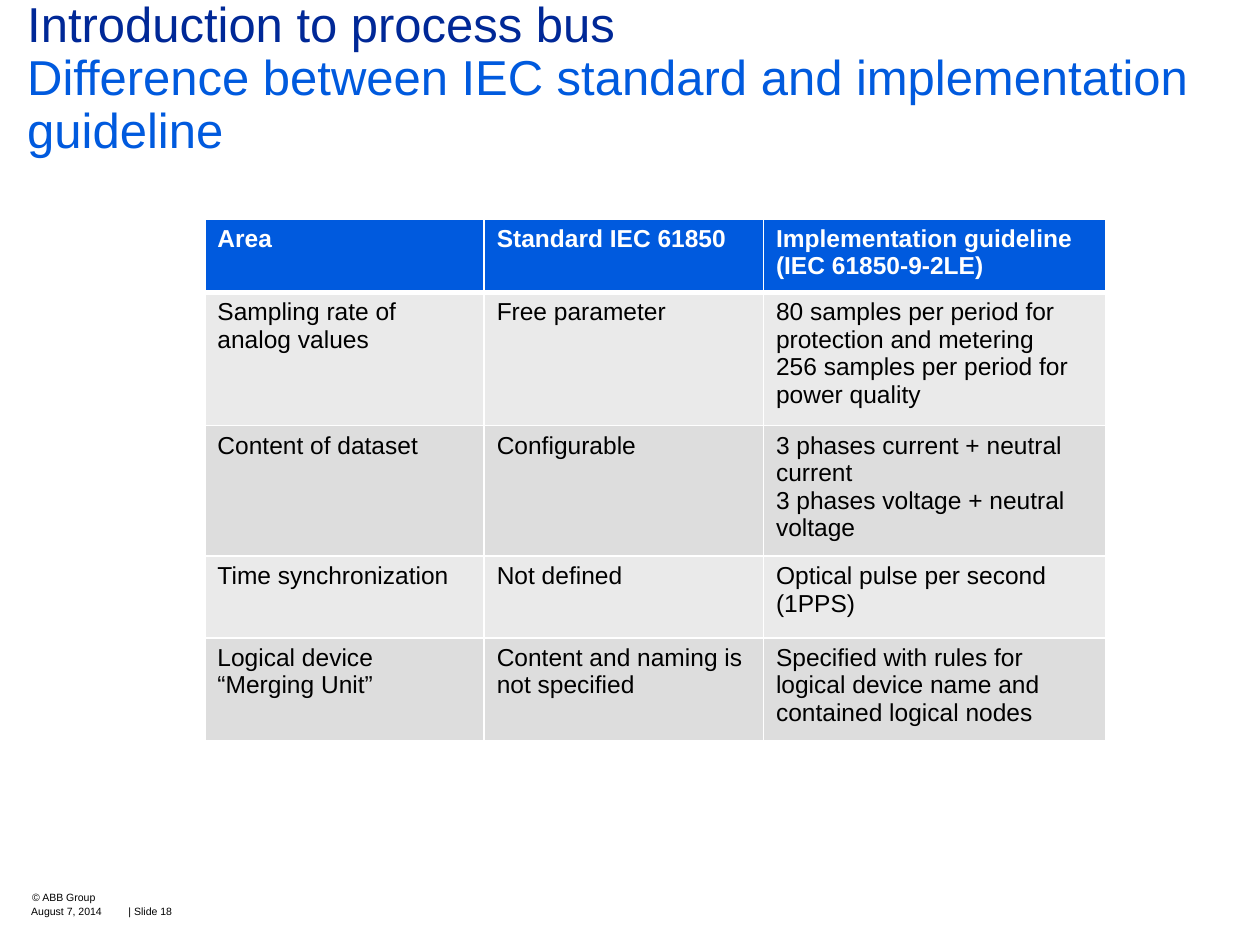
from lxml import etree
from pptx import Presentation
from pptx.dml.color import RGBColor
from pptx.oxml.ns import qn
from pptx.util import Cm, Pt

FONT = "Arial"
NAVY, BLUE, WHITE, BLACK = "002897", "005ADE", "FFFFFF", "000000"
BANDS = ("EAEAEA", "DDDDDD")

COLUMN_WIDTHS = (5.63, 5.63, 6.9)
ROW_HEIGHTS = (1.48, 2.69, 2.62, 1.65, 2.08)
ROWS = (
    ("Area", "Standard IEC 61850", "Implementation guideline (IEC 61850-9-2LE)"),
    ("Sampling rate of analog values", "Free parameter",
     "80 samples per period for protection and metering\n"
     "256 samples per period for power quality"),
    ("Content of dataset", "Configurable",
     "3 phases current + neutral current\n3 phases voltage + neutral voltage"),
    ("Time synchronization", "Not defined", "Optical pulse per second (1PPS)"),
    ("Logical device “Merging Unit”", "Content and naming is not specified",
     "Specified with rules for logical device name and contained logical nodes"),
)


def rgb(color):
    return RGBColor.from_string(color)


def format_runs(paragraph, size, color, bold=False):
    for run in paragraph.runs:
        run.font.name = FONT
        run.font.size = Pt(size)
        run.font.bold = bold
        run.font.color.rgb = rgb(color)


def add_text(slide, box, text, size, color, inset_left=0):
    shape = slide.shapes.add_textbox(*(Cm(length) for length in box))
    text_frame = shape.text_frame
    text_frame.word_wrap = True
    text_frame.margin_top = text_frame.margin_right = text_frame.margin_bottom = 0
    text_frame.margin_left = Cm(inset_left)
    text_frame.text = text
    format_runs(text_frame.paragraphs[0], size, color)
    return text_frame


def add_title(slide, box):
    text = ("Introduction to process bus\v"
            "Difference between IEC standard and implementation\vguideline")
    text_frame = add_text(slide, box, text, 28, BLUE, inset_left=0.55)
    paragraph = text_frame.paragraphs[0]
    paragraph.line_spacing = 0.9
    paragraph.runs[0].font.color.rgb = rgb(NAVY)


def set_borders(cell, top, bottom):
    """Draw white cell edges, with the top and bottom widths in points."""
    properties = cell._tc.get_or_add_tcPr()
    widths = {"a:lnL": 1, "a:lnR": 1, "a:lnT": top, "a:lnB": bottom}
    for index, (tag, width) in enumerate(widths.items()):
        line = etree.Element(qn(tag), w=str(Pt(width)))
        fill = etree.SubElement(line, qn("a:solidFill"))
        etree.SubElement(fill, qn("a:srgbClr"), val=WHITE)
        properties.insert(index, line)


def add_comparison_table(slide, left, top):
    table = slide.shapes.add_table(
        len(ROWS), len(COLUMN_WIDTHS), Cm(left), Cm(top),
        Cm(sum(COLUMN_WIDTHS)), Cm(sum(ROW_HEIGHTS))).table
    for column, width in zip(table.columns, COLUMN_WIDTHS):
        column.width = Cm(width)
    for row_index, (row, height) in enumerate(zip(table.rows, ROW_HEIGHTS)):
        row.height = Cm(height)
        header = row_index == 0
        fill = BLUE if header else BANDS[(row_index - 1) % 2]
        for cell, text in zip(row.cells, ROWS[row_index]):
            cell.text_frame.text = text
            for paragraph in cell.text_frame.paragraphs:
                format_runs(paragraph, 14, WHITE if header else BLACK, header)
            cell.fill.solid()
            cell.fill.fore_color.rgb = rgb(fill)
            set_borders(cell, top=3 if row_index == 1 else 1,
                        bottom=3 if header else 1)


def add_footer(slide, left, top):
    line_height = 0.27
    add_text(slide, (left + 0.02, top, 3.5, line_height), "© ABB Group", 6, BLACK)
    second_line = top + line_height
    add_text(slide, (left, second_line, 1.65, line_height),
             "August 7, 2014", 6, BLACK)
    add_text(slide, (left + 1.96, second_line, 1.24, line_height),
             "| Slide 18", 6, BLACK)


def main():
    presentation = Presentation()
    presentation.slide_width = Cm(25.4)
    presentation.slide_height = Cm(19.05)
    slide = presentation.slides.add_slide(presentation.slide_layouts[6])
    add_title(slide, (0, 0, 25.4, 3.12))
    add_comparison_table(slide, 4.13, 4.41)
    add_footer(slide, 0.63, 17.97)
    presentation.save("out.pptx")


if __name__ == "__main__":
    main()
